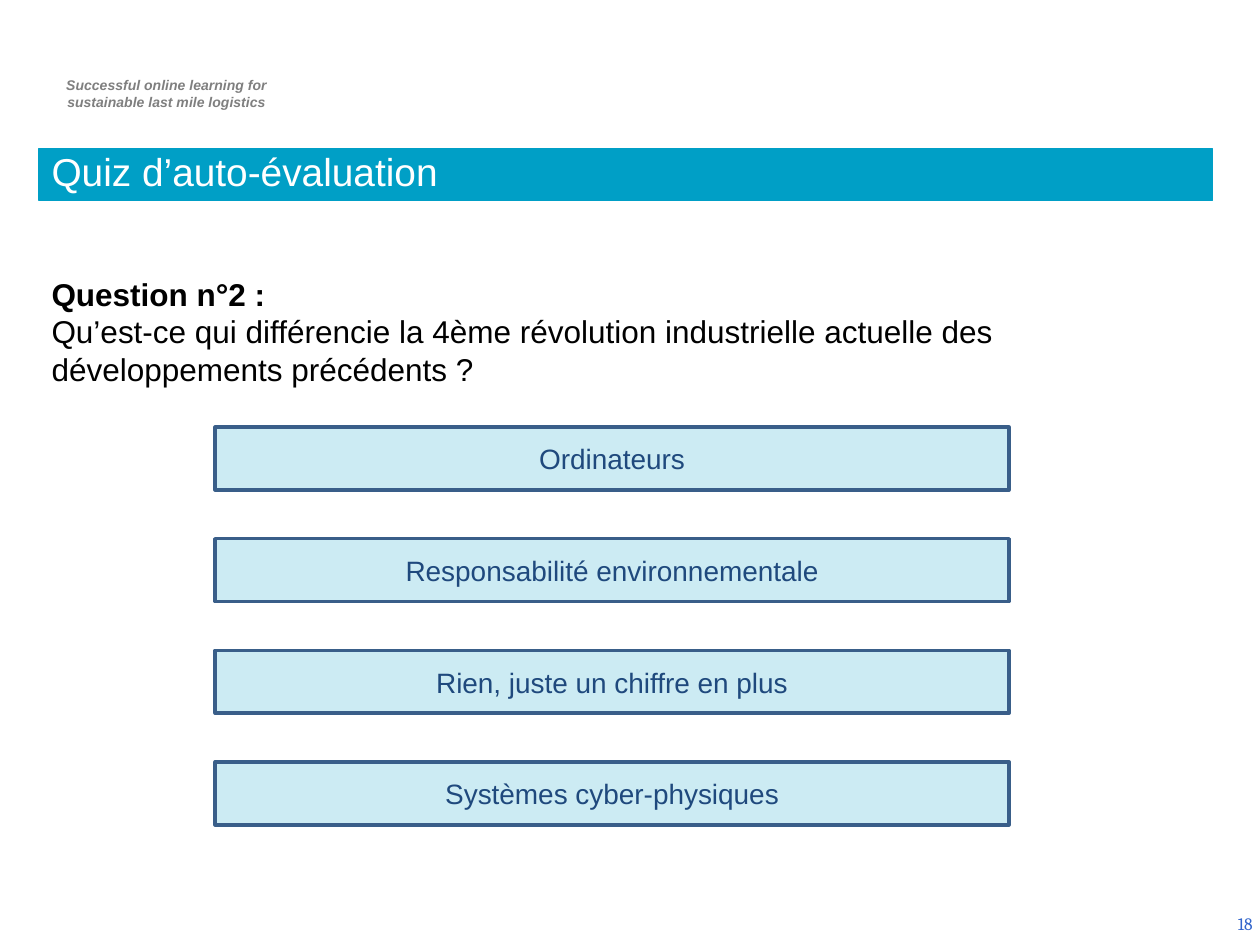
from pptx import Presentation
from pptx.dml.color import RGBColor
from pptx.enum.shapes import MSO_SHAPE as Shape
from pptx.enum.text import MSO_ANCHOR as Anchor, PP_ALIGN as Align
from pptx.oxml.ns import qn
from pptx.util import Cm, Pt
from lxml.etree import SubElement

TEAL = RGBColor(0x00, 0x9F, 0xC6)
BORDER = RGBColor(0x39, 0x5E, 0x89)
NAVY = RGBColor(0x1F, 0x49, 0x7D)
GREY = RGBColor(0x7F, 0x7F, 0x7F)
BLUE = RGBColor(0x33, 0x66, 0xCC)
BLACK = RGBColor(0, 0, 0)
WHITE = RGBColor(0xFF, 0xFF, 0xFF)

ANSWERS = [
    "Ordinateurs",
    "Responsabilité environnementale",
    "Rien, juste un chiffre en plus",
    "Systèmes cyber-physiques",
]
ANSWER_TOP, ANSWER_STEP = 8.61, 2.25


def write(para, text, *, size, color, font="Arial", bold=False, italic=False,
          align=Align.LEFT, spacing=None):
    """Add one formatted span of text to a paragraph."""
    para.alignment = align
    if spacing:
        para.line_spacing = spacing
    span = para.add_run()
    span.text = text
    span.font.name = font
    span.font.size = Pt(size)
    span.font.bold = bold
    span.font.italic = italic
    span.font.color.rgb = color


class QuizPage:
    """Holds the current slide and the style of its elements."""

    def __init__(self, deck):
        self.page = deck.slides.add_slide(deck.slide_layouts[6])

    def text(self, place, lines, anchor=Anchor.TOP, **style):
        """Text box; each line is a text with its own format changes."""
        box = self.page.shapes.add_textbox(*map(Cm, place))
        frame = box.text_frame
        frame.word_wrap = True
        frame.vertical_anchor = anchor
        for index, (line, changes) in enumerate(lines):
            para = frame.add_paragraph() if index else frame.paragraphs[0]
            write(para, line, **{**style, **changes})

    def bar(self, place, text, *, line, width, opacity=100,
            anchor=Anchor.MIDDLE, **style):
        """Teal rectangle with a label."""
        box = self.page.shapes.add_shape(Shape.RECTANGLE, *map(Cm, place))
        box.shadow.inherit = False
        box.fill.solid()
        box.fill.fore_color.rgb = TEAL
        if opacity < 100:
            color = next(box.fill._xPr.iter(qn("a:srgbClr")))
            SubElement(color, qn("a:alpha"), val=str(opacity * 1000))
        box.line.color.rgb = line
        box.line.width = Pt(width)
        box.text_frame.word_wrap = True
        box.text_frame.vertical_anchor = anchor
        write(box.text_frame.paragraphs[0], text, **style)


def main():
    deck = Presentation()
    deck.slide_width, deck.slide_height = Cm(25.4), Cm(19.05)
    quiz = QuizPage(deck)

    # Project tagline and page number
    quiz.text((0.78, 1.42, 5.16, 0.94),
              [("Successful online learning for", {}),
               ("sustainable last mile logistics", {})],
              size=8, color=GREY, bold=True, italic=True, align=Align.CENTER)
    quiz.text((19.58, 18.11, 5.92, 1.02), [("18", {})], anchor=Anchor.MIDDLE,
              size=10, color=BLUE, font="Cambria", align=Align.RIGHT)

    # Question
    quiz.text((0.79, 5.41, 23.65, 3.33),
              [("Question n°2 :", {"bold": True}),
               ("Qu’est-ce qui différencie la 4ème révolution industrielle "
                "actuelle des développements précédents ?", {})],
              size=18, color=BLACK)

    # Possible answers
    for index, answer in enumerate(ANSWERS):
        quiz.bar((4.34, ANSWER_TOP + index * ANSWER_STEP, 16, 1.27), answer,
                 line=BORDER, width=2, opacity=20,
                 size=16, color=NAVY, align=Align.CENTER)

    # Title
    quiz.bar((0.79, 3, 23.65, 1.04), "Quiz d’auto-évaluation",
             line=TEAL, width=0.75, anchor=Anchor.BOTTOM,
             size=22.2, color=WHITE, spacing=0.8)

    deck.save("out.pptx")


if __name__ == "__main__":
    main()
